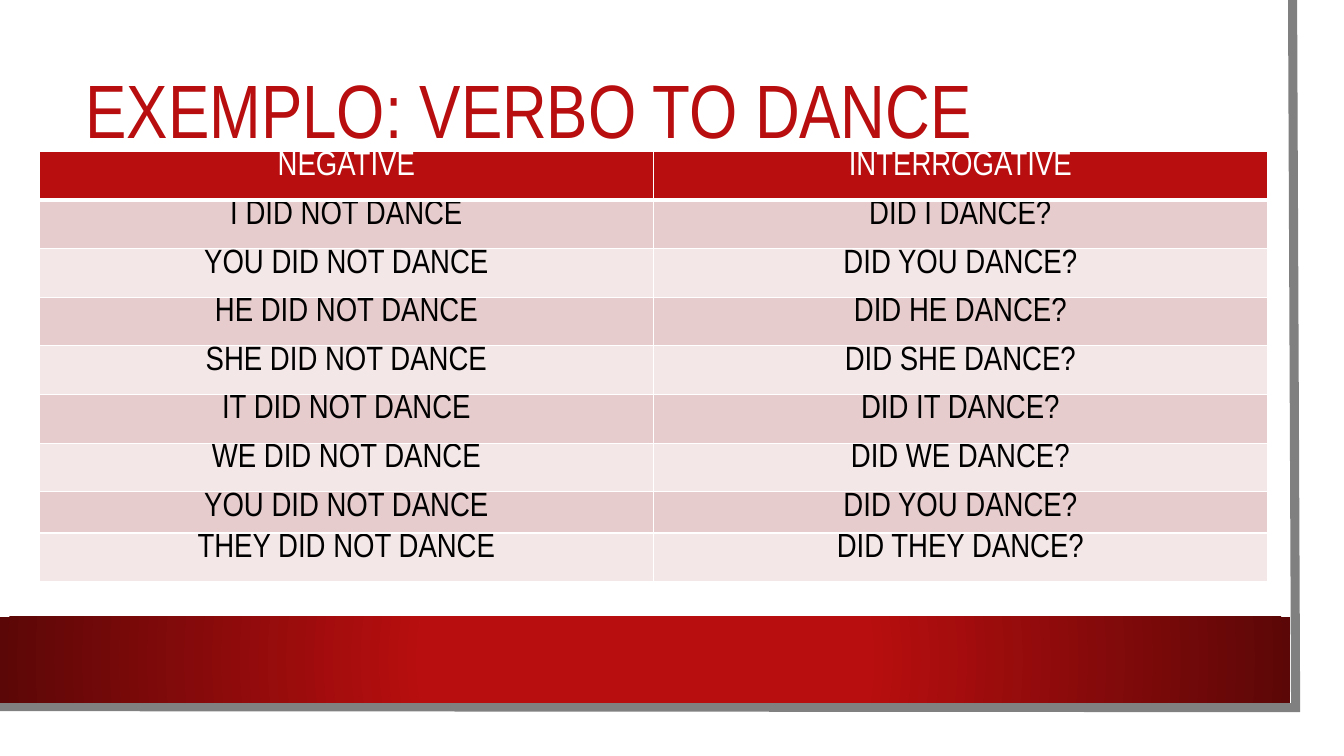
from lxml import etree
from pptx import Presentation
from pptx.dml.color import RGBColor
from pptx.enum.shapes import MSO_SHAPE
from pptx.enum.text import MSO_ANCHOR, MSO_AUTO_SIZE, PP_ALIGN
from pptx.oxml import parse_xml
from pptx.oxml.ns import nsdecls, qn
from pptx.util import Inches, Pt

RECTANGLE = MSO_SHAPE.RECTANGLE
MIDDLE = MSO_ANCHOR.MIDDLE
NO_AUTOFIT = MSO_AUTO_SIZE.NONE
LEFT, CENTER = PP_ALIGN.LEFT, PP_ALIGN.CENTER

TITLE = "EXEMPLO: VERBO TO DANCE"
CONJUGATION = [
    ("NEGATIVE", "INTERROGATIVE"),
    ("I DID NOT DANCE", "DID I DANCE?"),
    ("YOU DID NOT DANCE", "DID YOU DANCE?"),
    ("HE DID NOT DANCE", "DID HE DANCE?"),
    ("SHE DID NOT DANCE", "DID SHE DANCE?"),
    ("IT DID NOT DANCE", "DID IT DANCE?"),
    ("WE DID NOT DANCE", "DID WE DANCE?"),
    ("YOU DID NOT DANCE", "DID YOU DANCE?"),
    ("THEY DID NOT DANCE", "DID THEY DANCE?"),
]
FONT = "Arial Narrow"
RED, DARK_RED, GRAY = "B80E0F", "5C0707", "808080"
WHITE, BLACK = "FFFFFF", "000000"
BAND_FILLS = ["F3E7E7", "E6CCCC"]
ROW_HEIGHT, SHORT_ROW_HEIGHT, SHORT_ROW = 0.483, 0.41, 7
COLUMN_WIDTH = 6.09
EDGE_POINTS = [(12.82, 0), (12.85, 7.02), (-0.03, 7.01)]


def color(value):
    return RGBColor.from_string(value)


def write(text_frame, text, size, fill, align=LEFT, spacing=1.0):
    paragraph = text_frame.paragraphs[0]
    paragraph.alignment = align
    paragraph.line_spacing = spacing
    run = paragraph.add_run()
    run.text = text
    run.font.name = FONT
    run.font.size = Pt(size)
    run.font.color.rgb = color(fill)


def set_borders(cell, top, bottom):
    properties = cell._tc.get_or_add_tcPr()
    sides = [("lnL", 1), ("lnR", 1), ("lnT", top), ("lnB", bottom)]
    for position, (side, width) in enumerate(sides):
        properties.insert(position, parse_xml(
            f'<a:{side} {nsdecls("a")} w="{Pt(width)}"><a:solidFill>'
            f'<a:srgbClr val="{WHITE}"/></a:solidFill></a:{side}>'))


def add_edge(slide):
    start, *others = EDGE_POINTS
    builder = slide.shapes.build_freeform(
        Inches(start[0]), Inches(start[1]), scale=1.0)
    builder.add_line_segments(
        [(Inches(x), Inches(y)) for x, y in others], close=False)
    edge = builder.convert_to_shape()
    edge.shadow.inherit = False
    edge.fill.background()
    edge.line.color.rgb = color(GRAY)
    edge.line.width = Pt(6.5)
    etree.SubElement(edge.line._get_or_add_ln(), qn("a:miter"), lim="800000")


def add_footer_band(slide):
    band = slide.shapes.add_shape(
        RECTANGLE, 0, Inches(6.12), Inches(12.8), Inches(0.85))
    band.shadow.inherit = False
    band.line.fill.background()
    band._element.spPr.find(qn("a:prstGeom")).addnext(parse_xml(
        f'<a:gradFill {nsdecls("a")} rotWithShape="1"><a:gsLst>'
        f'<a:gs pos="34000"><a:srgbClr val="{RED}"/></a:gs>'
        f'<a:gs pos="100000"><a:srgbClr val="{DARK_RED}"/></a:gs></a:gsLst>'
        '<a:path path="circle"><a:fillToRect l="50000" t="50000" r="50000" '
        'b="50000"/></a:path></a:gradFill>'))


def format_title(slide):
    title = slide.shapes.title
    title.left, title.top = Inches(0.75), Inches(0.5)
    title.width, title.height = Inches(11.37), Inches(1.26)
    frame = title.text_frame
    frame.word_wrap = True
    frame.auto_size = NO_AUTOFIT
    frame.vertical_anchor = MIDDLE
    write(frame, TITLE, 54, RED, spacing=0.9)


def add_conjugation_table(slide):
    heights = [SHORT_ROW_HEIGHT if index == SHORT_ROW else ROW_HEIGHT
               for index in range(len(CONJUGATION))]
    columns = len(CONJUGATION[0])
    table = slide.shapes.add_table(
        len(CONJUGATION), columns, Inches(0.39), Inches(1.5),
        Inches(COLUMN_WIDTH * columns), Inches(sum(heights))).table
    for column in table.columns:
        column.width = Inches(COLUMN_WIDTH)
    for row_index, texts in enumerate(CONJUGATION):
        table.rows[row_index].height = Inches(heights[row_index])
        header = row_index == 0
        for column_index, text in enumerate(texts):
            cell = table.cell(row_index, column_index)
            cell.margin_top = cell.margin_bottom = 0
            cell.fill.solid()
            cell.fill.fore_color.rgb = color(
                RED if header else BAND_FILLS[row_index % 2])
            set_borders(cell, 3 if row_index == 1 else 1, 3 if header else 1)
            write(cell.text_frame, text, 24, WHITE if header else BLACK, CENTER)


def main():
    presentation = Presentation()
    presentation.slide_width = Inches(13.33)
    presentation.slide_height = Inches(7.5)
    slide = presentation.slides.add_slide(presentation.slide_layouts[5])
    add_edge(slide)
    add_footer_band(slide)
    format_title(slide)
    add_conjugation_table(slide)
    presentation.save("out.pptx")


if __name__ == "__main__":
    main()
